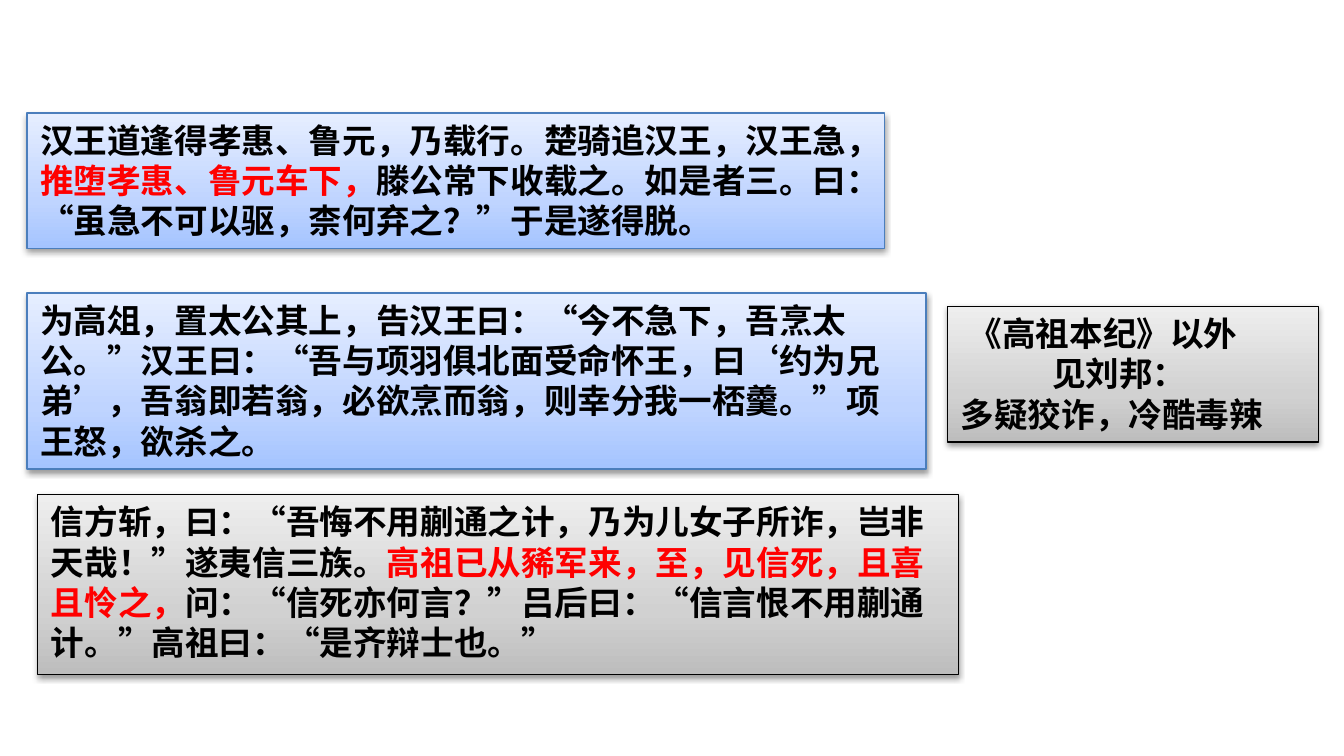
from dataclasses import dataclass

from lxml.etree import SubElement
from pptx import Presentation
from pptx.dml.color import RGBColor
from pptx.enum.shapes import MSO_SHAPE
from pptx.enum.text import MSO_ANCHOR, MSO_AUTO_SIZE, PP_ALIGN
from pptx.oxml import parse_xml
from pptx.oxml.ns import nsdecls, qn
from pptx.slide import Slide
from pptx.util import Pt

EMU_PER_PX = 9144


@dataclass(frozen=True)
class Palette:
    stops: tuple[str, str, str]
    line: str


@dataclass(frozen=True)
class Theme:
    blue: Palette = Palette(("A4C4FF", "BFD4FF", "E6EEFF"), "4B7EBC")
    gray: Palette = Palette(("BDBDBD", "D1D1D1", "EEEEEE"), "000000")
    ink: str = "000000"
    accent: str = "FF0000"
    size: int = 18
    quote_font: str = "Noto Sans CJK SC"
    verdict_font: str = "Calibri"


THEME = Theme()


@dataclass(frozen=True)
class Phrase:
    text: str
    color: str = THEME.ink


@dataclass(frozen=True)
class Line:
    phrases: tuple[Phrase, ...]
    indent: int = 0


@dataclass(frozen=True)
class Passage:
    left: int
    top: int
    width: int
    height: int
    palette: Palette
    lines: tuple[Line, ...]
    font: str = THEME.quote_font
    grows: bool = True


PASSAGES = (
    Passage(20, 84, 638, 101, THEME.blue, (Line((
        Phrase("汉王道逢得孝惠、鲁元，乃载行。楚骑追汉王，汉王急，"),
        Phrase("推堕孝惠、鲁元车下，", THEME.accent),
        Phrase("滕公常下收载之。如是者三。曰：“虽急不可以驱，柰何弃之？”于是遂得脱。"),
    )),)),
    Passage(28, 368, 685, 134, THEME.gray, (Line((
        Phrase("信方斩，曰：“吾悔不用蒯通之计，乃为儿女子所诈，岂非天哉！”遂夷信三族。"),
        Phrase("高祖已从豨军来，至，见信死，且喜且怜之，", THEME.accent),
        Phrase("问：“信死亦何言？”吕后曰：“信言恨不用蒯通计。”高祖曰：“是齐辩士也。”"),
    )),), grows=False),
    Passage(20, 218, 669, 131, THEME.blue, (Line((
        Phrase("为高俎，置太公其上，告汉王曰：“今不急下，吾烹太公。”"
               "汉王曰：“吾与项羽俱北面受命怀王，曰‘约为兄弟’，吾翁即若翁，"
               "必欲烹而翁，则幸分我一桮羹。”项王怒，欲杀之。"),
    )),)),
    Passage(705, 228, 276, 101, THEME.gray, (
        Line((Phrase("《高祖本纪》以外"),), indent=6),
        Line((Phrase("见刘邦："),), indent=68),
        Line((Phrase("多疑狡诈，冷酷毒辣"),)),
    ), font=THEME.verdict_font),
)


def px(length: int) -> int:
    return length * EMU_PER_PX


def gradient_fill(palette: Palette):
    stops = "".join(
        f'<a:gs pos="{position * 1000}"><a:srgbClr val="{color}"/></a:gs>'
        for position, color in zip((0, 35, 100), palette.stops)
    )
    return parse_xml(
        f'<a:gradFill {nsdecls("a")} rotWithShape="1"><a:gsLst>{stops}</a:gsLst>'
        '<a:lin ang="16200000" scaled="0"/></a:gradFill>'
    )


def drop_shadow():
    return parse_xml(
        f'<a:effectLst {nsdecls("a")}><a:outerShdw blurRad="{Pt(3.1)}" '
        f'dist="{Pt(1.6)}" dir="5400000" rotWithShape="0">'
        '<a:srgbClr val="000000"><a:alpha val="38000"/></a:srgbClr>'
        '</a:outerShdw></a:effectLst>'
    )


def add_passage(slide: Slide, passage: Passage) -> None:
    panel = slide.shapes.add_shape(
        MSO_SHAPE.RECTANGLE, px(passage.left), px(passage.top),
        px(passage.width), px(passage.height),
    )
    panel.line.color.rgb = RGBColor.from_string(passage.palette.line)
    panel.line.width = Pt(0.75)
    properties = panel.element.spPr
    properties.find(qn("a:ln")).addprevious(gradient_fill(passage.palette))
    properties.append(drop_shadow())

    frame = panel.text_frame
    frame.word_wrap = True
    frame.vertical_anchor = MSO_ANCHOR.TOP
    frame.auto_size = (
        MSO_AUTO_SIZE.SHAPE_TO_FIT_TEXT if passage.grows else MSO_AUTO_SIZE.NONE
    )
    for index, line in enumerate(passage.lines):
        paragraph = frame.add_paragraph() if index else frame.paragraphs[0]
        paragraph.alignment = PP_ALIGN.LEFT
        if line.indent:
            paragraph._p.get_or_add_pPr().set("marL", str(px(line.indent)))
        for phrase in line.phrases:
            run = paragraph.add_run()
            run.text = phrase.text
            run.font.size = Pt(THEME.size)
            run.font.bold = True
            run.font.color.rgb = RGBColor.from_string(phrase.color)
            run.font.name = passage.font
            east_asian = SubElement(run._r.get_or_add_rPr(), qn("a:ea"))
            east_asian.set("typeface", THEME.quote_font)


def main() -> None:
    deck = Presentation()
    deck.slide_width = px(1000)
    deck.slide_height = deck.slide_width * 9 // 16
    slide = deck.slides.add_slide(deck.slide_layouts[6])
    for passage in PASSAGES:
        add_passage(slide, passage)
    deck.save("out.pptx")


if __name__ == "__main__":
    main()
